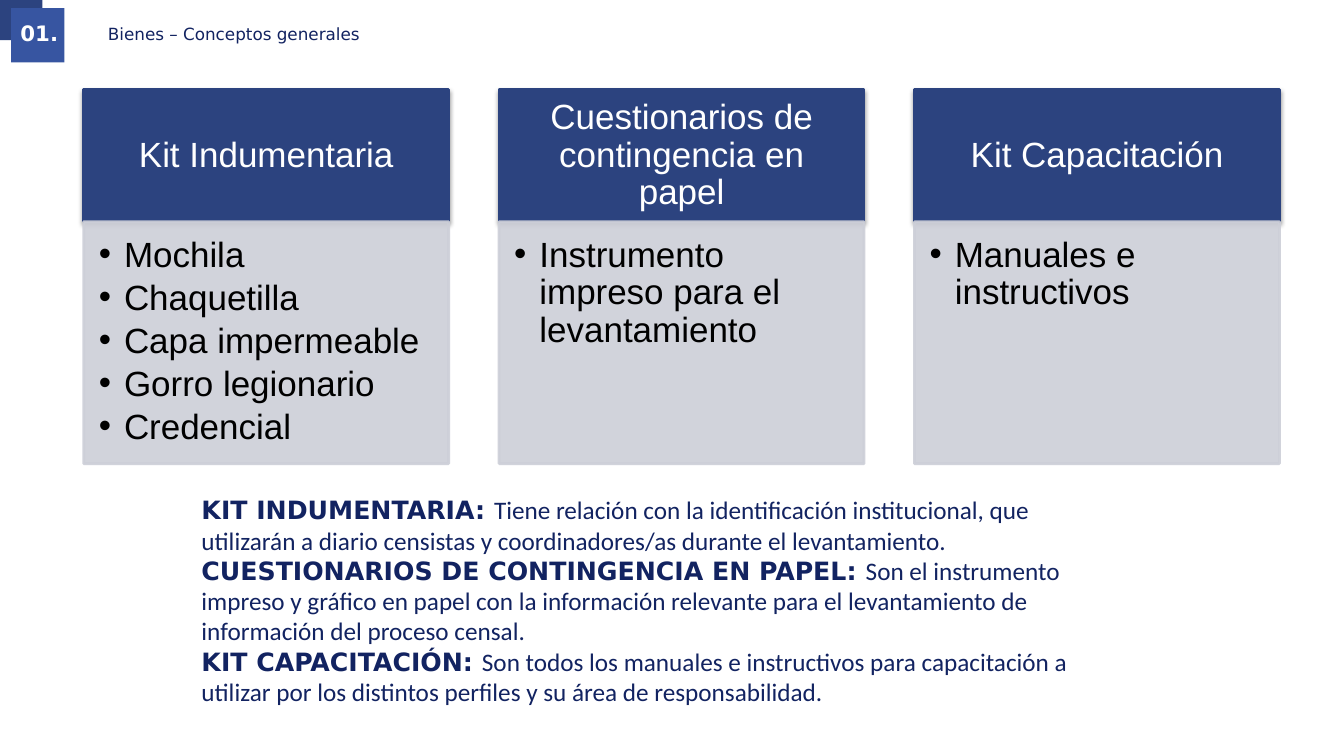
"""Builds the slide on the general concepts of goods: three kits and their definitions."""
from lxml import etree
from pptx import Presentation
from pptx.dml.color import RGBColor
from pptx.enum.shapes import MSO_SHAPE
from pptx.enum.text import MSO_ANCHOR, PP_ALIGN
from pptx.oxml.ns import qn
from pptx.util import Inches, Pt

RECTANGLE = MSO_SHAPE.RECTANGLE
TOP, MIDDLE = MSO_ANCHOR.TOP, MSO_ANCHOR.MIDDLE
LEFT, CENTER = PP_ALIGN.LEFT, PP_ALIGN.CENTER

NAVY, BLUE, GRAY, INK = "2C437F", "3755A1", "CDCFD8", "122361"
WHITE, BLACK = "FFFFFF", "000000"
HEADING_FONT, KIT_FONT, PROSE_FONT = "DejaVu Sans", "Arial", "Calibri"

SECTION = "01."
TITLE = "Bienes – Conceptos generales"
KITS = [
    ("Kit Indumentaria",
     ["Mochila", "Chaquetilla", "Capa impermeable", "Gorro legionario", "Credencial"]),
    ("Cuestionarios de contingencia en papel",
     ["Instrumento impreso para el levantamiento"]),
    ("Kit Capacitación", ["Manuales e instructivos"]),
]
DEFINITIONS = [
    ("KIT INDUMENTARIA: ",
     "Tiene relación con la identificación institucional, que utilizarán a diario "
     "censistas y coordinadores/as durante el levantamiento."),
    ("CUESTIONARIOS DE CONTINGENCIA EN PAPEL: ",
     "Son el instrumento impreso y gráfico en papel con la información relevante para "
     "el levantamiento de información del proceso censal."),
    ("KIT CAPACITACIÓN: ",
     "Son todos los manuales e instructivos para capacitación a utilizar por los "
     "distintos perfiles y su área de responsabilidad."),
]

KIT_LEFT, KIT_TOP, KIT_WIDTH, KIT_STEP = 0.83, 0.89, 3.62, 4.12
HEADER_HEIGHT, ITEMS_HEIGHT = 1.31, 2.4


def color(value):
    return RGBColor.from_string(value)


def style(font, name, size, ink, bold=False):
    font.name, font.size, font.bold = name, Pt(size), bold
    font.color.rgb = color(ink)


def set_frame(frame, anchor, insets):
    frame.word_wrap = True
    frame.vertical_anchor = anchor
    (frame.margin_left, frame.margin_top,
     frame.margin_right, frame.margin_bottom) = map(Inches, insets)


def add_box(slide, box, fill, outlined=False):
    rectangle = slide.shapes.add_shape(RECTANGLE, *map(Inches, box))
    rectangle.shadow.inherit = False
    rectangle.fill.solid()
    rectangle.fill.fore_color.rgb = color(fill)
    if outlined:
        rectangle.line.color.rgb = color(fill)
        rectangle.line.width = Pt(2)
    else:
        rectangle.line.fill.background()
    return rectangle


def set_alpha(srgb, percent):
    etree.SubElement(srgb, qn("a:alpha"), val=str(percent * 1000))


def add_shadow(rectangle):
    effects = rectangle._element.spPr.find(qn("a:effectLst"))
    shadow = etree.SubElement(
        effects, qn("a:outerShdw"), blurRad=str(Pt(3.1)), dist=str(Pt(1.6)),
        dir="5400000", algn="t", rotWithShape="0")
    set_alpha(etree.SubElement(shadow, qn("a:srgbClr"), val=BLACK), 38)


def add_bullet(paragraph):
    properties = paragraph._p.get_or_add_pPr()
    properties.set("marL", str(Inches(0.25)))
    properties.set("indent", str(Inches(-0.25)))
    bullet_color = etree.SubElement(properties, qn("a:buClr"))
    etree.SubElement(bullet_color, qn("a:srgbClr"), val=BLACK)
    etree.SubElement(properties, qn("a:buFont"), typeface=KIT_FONT)
    etree.SubElement(properties, qn("a:buChar"), char="•")


def add_kit(slide, left, name, items):
    header = add_box(slide, (left, KIT_TOP, KIT_WIDTH, HEADER_HEIGHT), NAVY, outlined=True)
    add_shadow(header)
    set_frame(header.text_frame, MIDDLE, (0.19, 0.11, 0.19, 0.11))
    header.text_frame.text = name
    heading = header.text_frame.paragraphs[0]
    heading.alignment, heading.line_spacing = CENTER, 0.9
    style(heading.runs[0].font, KIT_FONT, 25, WHITE)

    contents = add_box(
        slide, (left, KIT_TOP + HEADER_HEIGHT, KIT_WIDTH, ITEMS_HEIGHT), GRAY, outlined=True)
    for srgb in list(contents._element.spPr.iter(qn("a:srgbClr"))):
        set_alpha(srgb, 90)
    set_frame(contents.text_frame, TOP, (0.15, 0.15, 0.19, 0.22))
    contents.text_frame.text = "\n".join(items)
    for item in contents.text_frame.paragraphs:
        add_bullet(item)
        item.alignment, item.line_spacing, item.space_after = LEFT, 0.9, Pt(3.75)
        style(item.runs[0].font, KIT_FONT, 25, BLACK)


def add_definitions(slide):
    box = slide.shapes.add_textbox(*map(Inches, (1.9, 4.86, 8.92, 2.4)))
    frame = box.text_frame
    set_frame(frame, TOP, (0.1, 0.05, 0.1, 0.05))
    for index, (term, meaning) in enumerate(DEFINITIONS):
        paragraph = frame.add_paragraph() if index else frame.paragraphs[0]
        for text, font, bold in ((term, HEADING_FONT, True), (meaning, PROSE_FONT, False)):
            run = paragraph.add_run()
            run.text = text
            style(run.font, font, 18, INK, bold)


def add_heading(slide):
    add_box(slide, (0, 0, 0.42, 0.4), NAVY)
    add_box(slide, (0.11, 0.08, 0.53, 0.54), BLUE)
    title = slide.shapes.title
    title.left, title.top, title.width, title.height = map(Inches, (0.82, 0.08, 11.91, 0.54))
    number = slide.shapes.add_textbox(*map(Inches, (0.07, 0.09, 0.64, 0.54)))
    for shape, text, insets, align, spacing, size, ink, bold in (
        (title, TITLE, (0.25, 0.05, 0.1, 0.05), LEFT, 0.9, 12, INK, False),
        (number, SECTION, (0.1, 0.05, 0.1, 0.05), CENTER, 0.7, 15.2, WHITE, True),
    ):
        set_frame(shape.text_frame, MIDDLE, insets)
        shape.text_frame.text = text
        line = shape.text_frame.paragraphs[0]
        line.alignment, line.line_spacing = align, spacing
        style(line.runs[0].font, HEADING_FONT, size, ink, bold)


def main():
    deck = Presentation()
    deck.slide_width, deck.slide_height = Inches(13.33), Inches(7.5)
    slide = deck.slides.add_slide(deck.slide_layouts[5])
    add_heading(slide)
    for column, (name, items) in enumerate(KITS):
        add_kit(slide, KIT_LEFT + column * KIT_STEP, name, items)
    add_definitions(slide)
    deck.save("out.pptx")


if __name__ == "__main__":
    main()
